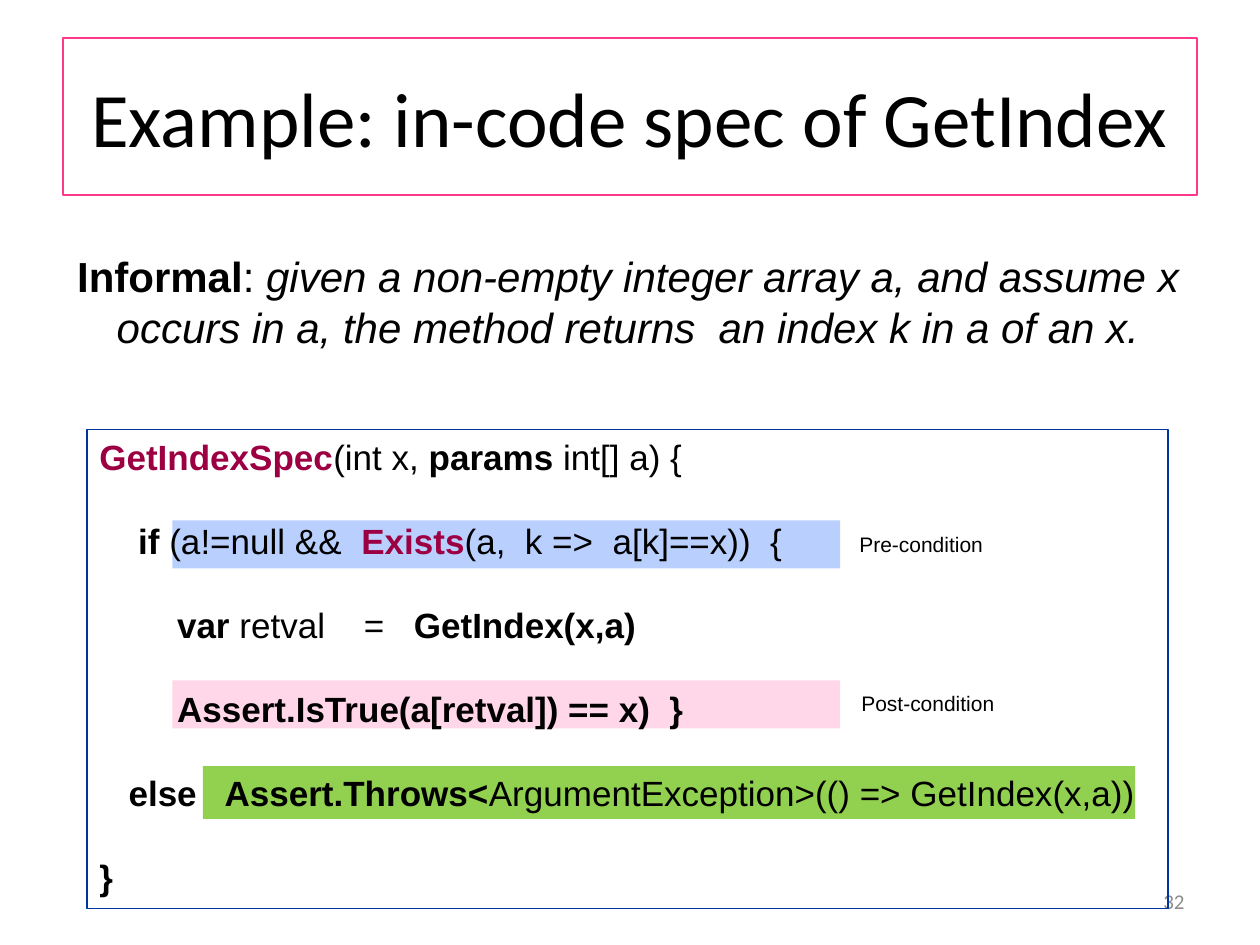
from dataclasses import dataclass

from pptx import Presentation
from pptx.dml.color import RGBColor
from pptx.enum.shapes import MSO_SHAPE as SHAPE
from pptx.enum.text import MSO_ANCHOR as ANCHOR, MSO_AUTO_SIZE as AUTO, PP_ALIGN as ALIGN
from pptx.util import Pt


@dataclass(frozen=True)
class Theme:
    """Colours, fonts and type sizes of the slide."""
    black: str = "000000"
    grey: str = "8C8C8C"
    keyword: str = "9C0042"
    title_line: str = "FF388C"
    code_line: str = "00349E"
    pre: str = "B9D0FF"
    post: str = "FFD7E8"
    error: str = "92D050"
    body_font: str = "Arial"
    title_font: str = "Calibri"
    title: int = 44
    intro: int = 24
    code: int = 20
    small: int = 12
    leading: float = 1.2


T = Theme()
STYLES = {
    "": (False, False, T.black),
    "b": (True, False, T.black),
    "i": (False, True, T.black),
    "k": (True, False, T.keyword),
    "n": (False, False, T.grey),
}
CODE = [
    (0, [("GetIndexSpec", "k"), ("(int x, ", ""), ("params", "b"), (" int[] a) {", "")]),
    (22.2, [("if", "b"), (" (a!=null &&  ", ""), ("Exists", "k"),
            ("(a,  k =>  a[k]==x))  {", "")]),
    (44.4, [("var ", "b"), ("retval    =   ", ""), ("GetIndex(x,a)", "b")]),
    (44.4, [("Assert.IsTrue(a[retval]) == x)  }", "b")]),
    (16.7, [("else   Assert.Throws<", "b"), ("ArgumentException>(() => GetIndex(x,a))", "")]),
    (0, [("}", "b")]),
]


def add_runs(p, parts, size, font=T.body_font):
    """Append styled runs to a paragraph."""
    for text, style in parts:
        r = p.add_run()
        r.text = text
        r.font.name, r.font.size = font, Pt(size)
        r.font.bold, r.font.italic, color = STYLES[style]
        r.font.color.rgb = RGBColor.from_string(color)


def add_rect(s, box, fill=None, line=None, width=0.75):
    """Add a flat rectangle with an optional fill and outline."""
    sp = s.shapes.add_shape(SHAPE.RECTANGLE, *map(Pt, box))
    sp.shadow.inherit = False
    if fill:
        sp.fill.solid()
        sp.fill.fore_color.rgb = RGBColor.from_string(fill)
    else:
        sp.fill.background()
    if line:
        sp.line.color.rgb = RGBColor.from_string(line)
        sp.line.width = Pt(width)
    else:
        sp.line.fill.background()
    return sp


def add_text(s, box, parts, size, align, font=T.body_font, anchor=ANCHOR.TOP):
    """Add a wrapping one-paragraph text box and return its paragraph."""
    tf = s.shapes.add_textbox(*map(Pt, box)).text_frame
    tf.word_wrap = True
    tf.vertical_anchor = anchor
    p = tf.paragraphs[0]
    p.alignment = align
    add_runs(p, parts, size, font)
    return p


def set_title(s, box, text):
    """Place, outline and format the title placeholder."""
    sp = s.shapes.title
    sp.left, sp.top, sp.width, sp.height = map(Pt, box)
    sp.line.color.rgb = RGBColor.from_string(T.title_line)
    sp.line.width = Pt(1)
    tf = sp.text_frame
    tf.auto_size = AUTO.NONE
    tf.vertical_anchor = ANCHOR.MIDDLE
    p = tf.paragraphs[0]
    p.alignment = ALIGN.CENTER
    add_runs(p, [(text, "")], T.title, T.title_font)


def add_code(s, box, lines):
    """Add the outlined listing with indented, evenly spaced lines."""
    tf = add_rect(s, box, line=T.code_line).text_frame
    tf.word_wrap = True
    tf.vertical_anchor = ANCHOR.TOP
    leading = Pt(T.code * T.leading)
    for i, (indent, parts) in enumerate(lines):
        p = tf.add_paragraph() if i else tf.paragraphs[0]
        p.alignment = ALIGN.LEFT
        p.line_spacing = leading
        p.space_before = leading if i else Pt(0)
        p._p.get_or_add_pPr().set("marL", str(Pt(indent)))
        add_runs(p, parts, T.code)


def main():
    """Build the slide and save it."""
    prs = Presentation()
    prs.slide_width, prs.slide_height = Pt(720), Pt(540)
    s = prs.slides.add_slide(prs.slide_layouts[5])
    set_title(s, (36, 21.6, 648, 90), "Example: in-code spec of GetIndex")

    add_rect(s, (115.9, 437.8, 532.8, 30.2), T.error)
    add_rect(s, (98.6, 388.8, 381.6, 27.4), T.post)
    add_rect(s, (98.6, 297.4, 381.6, 27.4), T.pre)

    add_text(s, (516.2, 500.4, 167.8, 28.8), [("32", "n")], T.small, ALIGN.RIGHT,
             T.title_font, ANCHOR.MIDDLE)
    add_code(s, (49.7, 245.5, 617.8, 273.6), CODE)
    intro = add_text(s, (33.8, 139.7, 650.2, 65.5), [
        ("Informal", "b"), (": ", ""),
        ("given a non-empty integer array a, and assume x occurs in a, "
         "the method returns  an index k in a of an x.", "i"),
    ], T.intro, ALIGN.CENTER)
    intro.line_spacing = Pt(T.intro * T.leading)

    for left, top, label in ((462.2, 300.2, "Pre-condition"), (468.7, 391, "Post-condition")):
        add_text(s, (left, top, 106.6, 21.6), [(label, "")], T.small, ALIGN.RIGHT)
    prs.save("out.pptx")


if __name__ == "__main__":
    main()
